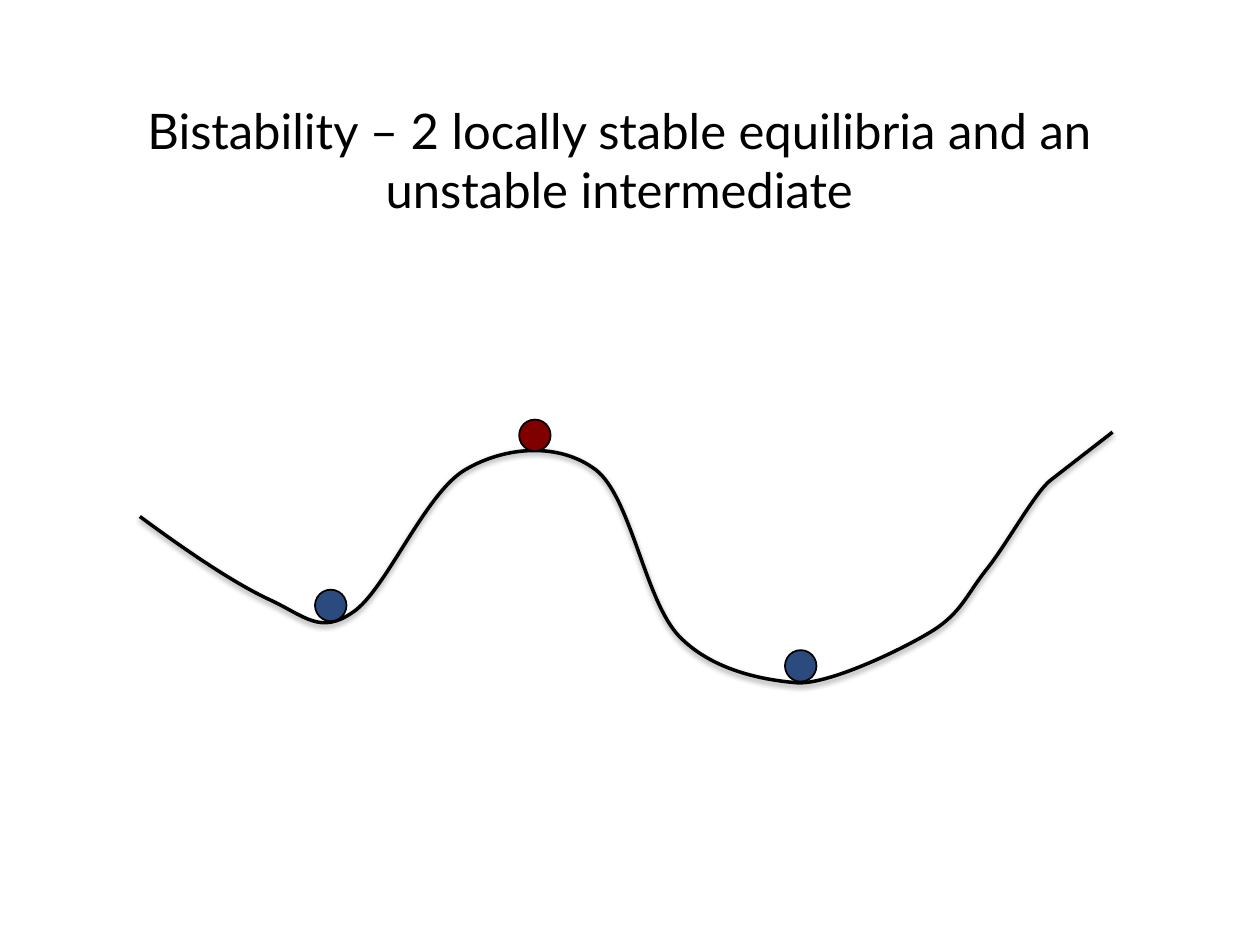
from itertools import chain

from lxml import etree
from pptx import Presentation
from pptx.dml.color import RGBColor
from pptx.enum.shapes import MSO_SHAPE
from pptx.enum.text import MSO_ANCHOR, MSO_AUTO_SIZE, PP_ALIGN
from pptx.oxml.ns import qn
from pptx.util import Inches, Pt

OVAL = MSO_SHAPE.OVAL
CENTER = PP_ALIGN.CENTER
TOP = MSO_ANCHOR.TOP
GROW = MSO_AUTO_SIZE.SHAPE_TO_FIT_TEXT

# The slide is a grid of 1000 columns by 750 rows
COLUMNS, ROWS = 1000, 750
CELL = Inches(10) // COLUMNS

BLACK, BLUE, RED = "000000", "2B4B7F", "800000"
BALL_SIZE = 25

TITLE = "Bistability – 2 locally stable equilibria and an unstable intermediate"

# Landscape: a start, then cubic segments (two controls and an end), then a line
CURVE_START = (111, 410)
CURVE_SEGMENTS = [
    ((149, 438), (186, 463), (214, 476)),
    ((242, 489), (254, 504), (280, 486)),
    ((306, 469), (337, 392), (369, 373)),
    ((401, 354), (444, 351), (473, 373)),
    ((501, 395), (512, 477), (539, 505)),
    ((566, 533), (608, 540), (633, 542)),
    ((658, 543), (713, 517), (738, 502)),
    ((763, 487), (767, 472), (783, 452)),
    ((799, 432), (822, 390), (834, 381)),
]
CURVE_END = (883, 343)


def cells(*counts):
    return [count * CELL for count in counts]


def color(hex_value):
    return RGBColor.from_string(hex_value)


def apply_format(target, values):
    for name, value in values.items():
        setattr(target, name, value)


def set_line(shape, hex_value, points):
    shape.line.color.rgb = color(hex_value)
    shape.line.width = Pt(points)


def add_title(page, left, top, width, height):
    box = page.shapes.add_textbox(*cells(left, top, width, height))
    frame = box.text_frame
    apply_format(frame, {"word_wrap": True, "auto_size": GROW, "vertical_anchor": TOP})
    para = frame.paragraphs[0]
    para.alignment = CENTER
    # Space before as a share of the line
    before = etree.SubElement(para._p.get_or_add_pPr(), qn("a:spcBef"))
    etree.SubElement(before, qn("a:spcPct"), val="50000")
    span = para.add_run()
    span.text = TITLE
    apply_format(span.font, {"name": "Lato", "size": Pt(28)})
    span.font.color.rgb = color(BLACK)


def add_ball(page, left, top, fill):
    ball = page.shapes.add_shape(OVAL, *cells(left, top, BALL_SIZE, BALL_SIZE))
    ball.shadow.inherit = False
    ball.fill.solid()
    ball.fill.fore_color.rgb = color(fill)
    set_line(ball, BLACK, 1)


def bend_segments(shape, count):
    """Turn the first count triples of straight steps into cubic curves."""
    steps = list(shape._element.iter(qn("a:lnTo")))
    for first in range(0, 3 * count, 3):
        triple = steps[first:first + 3]
        curve = etree.Element(qn("a:cubicBezTo"))
        triple[0].addprevious(curve)
        for step in triple:
            curve.append(step[0])
            step.getparent().remove(step)


def add_soft_shadow(shape, blur, distance, opacity):
    shape.shadow.inherit = False
    effects = shape._element.spPr.find(qn("a:effectLst"))
    shadow = etree.SubElement(
        effects, qn("a:outerShdw"), blurRad=str(Pt(blur)), dist=str(Pt(distance)),
        dir=str(90 * 60000), rotWithShape="0")
    tint = etree.SubElement(shadow, qn("a:srgbClr"), val=BLACK)
    etree.SubElement(tint, qn("a:alpha"), val=str(opacity * 1000))


def add_landscape(page):
    builder = page.shapes.build_freeform(*cells(*CURVE_START))
    points = [*chain.from_iterable(CURVE_SEGMENTS), CURVE_END]
    builder.add_line_segments([cells(*point) for point in points], close=False)
    landscape = builder.convert_to_shape()
    bend_segments(landscape, len(CURVE_SEGMENTS))
    landscape.fill.background()
    set_line(landscape, BLACK, 2)
    add_soft_shadow(landscape, 3.1, 1.6, 38)


def main():
    deck = Presentation()
    deck.slide_width, deck.slide_height = cells(COLUMNS, ROWS)
    page = deck.slides.add_slide(deck.slide_layouts[6])

    # Right-hand stable state, behind the curve
    add_ball(page, 623, 516, BLUE)
    add_title(page, 50, 75, 883, 104)
    add_landscape(page)

    # Unstable peak and left-hand stable state
    add_ball(page, 412, 333, RED)
    add_ball(page, 250, 468, BLUE)

    deck.save("out.pptx")


if __name__ == "__main__":
    main()
